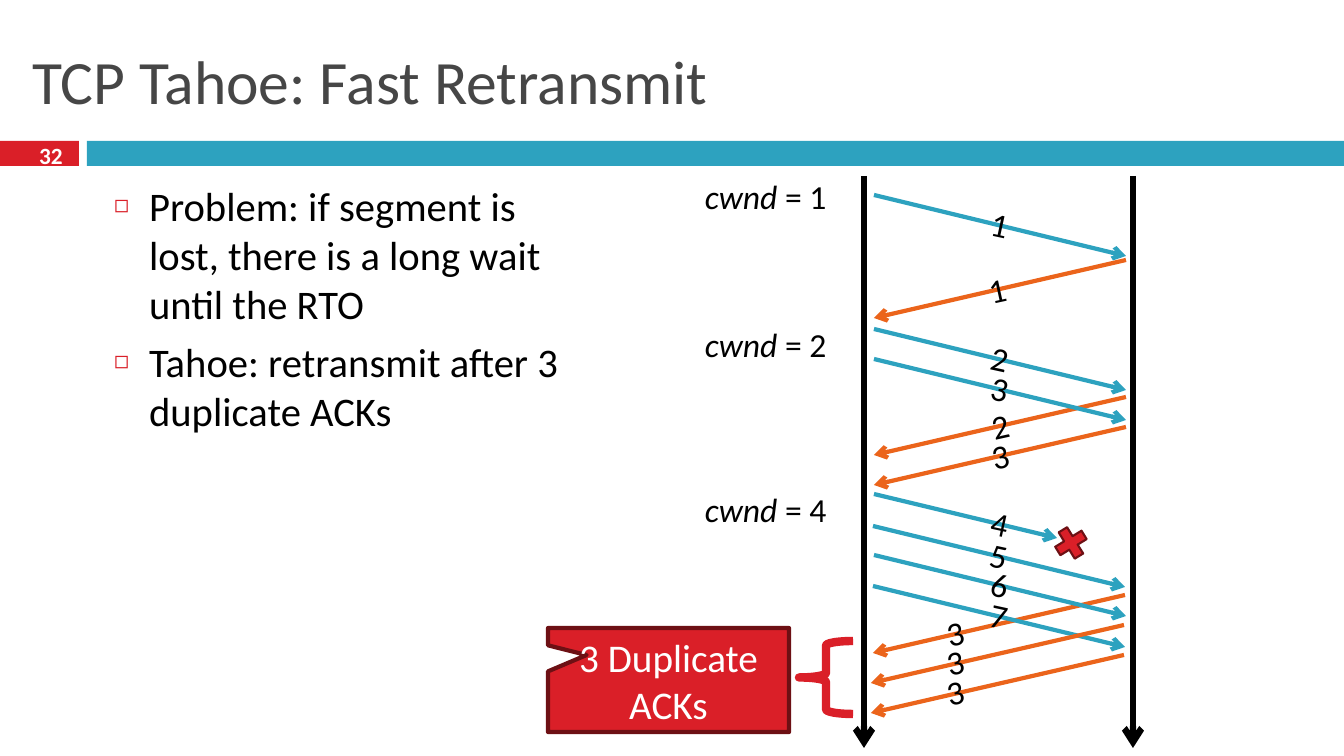
from dataclasses import dataclass

from lxml import etree
from pptx import Presentation, slide as sl, util as u
from pptx.dml import color as col
from pptx.enum import shapes as kinds, text as en
from pptx.oxml import ns
from pptx.shapes import autoshape as auto, base
from pptx.text import text as tx

SCALE = 914400 / 100.8
BLACK, WHITE, GREY = "000000", "FFFFFF", "464646"
RED, DARK, BLUE, ORANGE = "DA1F28", "6D1014", "2DA2BF", "EB641B"
SHAPE = kinds.MSO_SHAPE
LEFT, CENTER = en.PP_ALIGN.LEFT, en.PP_ALIGN.CENTER
TOP, MIDDLE = en.MSO_ANCHOR.TOP, en.MSO_ANCHOR.MIDDLE

Box = tuple[int, int, int, int]


@dataclass
class Data:
    x: int
    y: int
    label: str
    run: int = 252
    drop: int = 61


@dataclass
class Ack:
    x: int
    y: int
    end: int
    label: str
    left: int
    down: int


@dataclass
class Window:
    y: int
    size: int


SENDS = [
    Data(874, 195, "1"),
    Data(874, 329, "2"),
    Data(874, 359, "3"),
    Data(874, 494, "4", 183, 44),
    Data(873, 526, "5"),
    Data(874, 555, "6"),
    Data(873, 586, "7"),
]
ACKS = [
    Ack(1126, 260, 874, "1", 941, 4),
    Ack(1126, 397, 874, "2", 944, 3),
    Ack(1126, 427, 874, "3", 944, 3),
    Ack(1125, 595, 873, "3", 899, 12),
    Ack(1124, 625, 871, "3", 899, 11),
    Ack(1124, 655, 871, "3", 899, 11),
]
WINDOWS = [Window(171, 1), Window(319, 2), Window(484, 4)]
POINTS = [
    "Problem: if segment is lost, there is a long wait until the RTO",
    "Tahoe: retransmit after 3 duplicate ACKs",
]


def px(size: int) -> u.Emu:
    return u.Emu(round(size * SCALE))


def rgb(code: str) -> col.RGBColor:
    return col.RGBColor.from_string(code)


def place(item: base.BaseShape, box: Box) -> None:
    item.left, item.top, item.width, item.height = map(px, box)


def mark(para: tx._Paragraph) -> None:
    props = para._p.get_or_add_pPr()
    props.set("marL", str(px(35)))
    props.set("indent", str(-px(35)))
    tint = etree.SubElement(props, ns.qn("a:buClr"))
    etree.SubElement(tint, ns.qn("a:srgbClr"), val=RED)
    etree.SubElement(props, ns.qn("a:buSzPct"), val="60000")
    etree.SubElement(props, ns.qn("a:buChar"), char="◻")


def write(frame: tx.TextFrame, lines: list[str], size: float, color: str = BLACK,
          align: en.PP_ALIGN = LEFT, anchor: en.MSO_ANCHOR = TOP, lead: str = "",
          bold: bool = False, wrap: bool = True, bullet: bool = False,
          gap: int = 0) -> None:
    frame.auto_size = en.MSO_AUTO_SIZE.NONE
    frame.word_wrap = wrap
    frame.vertical_anchor = anchor
    for i, line in enumerate(lines):
        para = frame.add_paragraph() if i else frame.paragraphs[0]
        if bullet:
            mark(para)
        para.alignment = align
        para.space_before = u.Pt(gap if i else 0)
        for part, slant in ((lead, True), (line, False)):
            if part:
                run = para.add_run()
                run.text = part
                font = run.font
                font.name, font.size = "Calibri", u.Pt(size)
                font.bold, font.italic = bold, slant
                font.color.rgb = rgb(color)


def label(page: sl.Slide, box: Box, words: str, size: float = 24,
          turn: float = 0, **form) -> None:
    item = page.shapes.add_textbox(*map(px, box))
    item.rotation = turn
    write(item.text_frame, [words], size, **form)


def draw(page: sl.Slide, kind: kinds.MSO_SHAPE, box: Box, fill: str = "",
         line: str = "", width: float = 1) -> auto.Shape:
    item = page.shapes.add_shape(kind, *map(px, box))
    item.shadow.inherit = False
    if fill:
        item.fill.solid()
        item.fill.fore_color.rgb = rgb(fill)
    else:
        item.fill.background()
    if line:
        item.line.color.rgb = rgb(line)
        item.line.width = u.Pt(width)
    else:
        item.line.fill.background()
    return item


def arrow(page: sl.Slide, ends: Box, color: str, width: float = 3) -> None:
    item = page.shapes.add_connector(kinds.MSO_CONNECTOR.STRAIGHT, *map(px, ends))
    item.line.color.rgb = rgb(color)
    item.line.width = u.Pt(width)
    etree.SubElement(item.line._get_or_add_ln(), ns.qn("a:tailEnd"), type="arrow")
    etree.SubElement(item._element.spPr, ns.qn("a:effectLst"))


def reply(page: sl.Slide, ack: Ack) -> None:
    arrow(page, (ack.x, ack.y, ack.end, ack.y + 58), ORANGE)


def frame(page: sl.Slide) -> None:
    draw(page, SHAPE.RECTANGLE, (0, 141, 79, 25), RED)
    draw(page, SHAPE.RECTANGLE, (87, 141, 1257, 25), BLUE)
    title, body = page.shapes.title, page.placeholders[1]
    place(title, (22, 25, 1299, 109))
    write(title.text_frame, ["TCP Tahoe: Fast Retransmit"], 44, GREY, anchor=MIDDLE)
    label(page, (22, 139, 58, 33), "32", 16.6, color=WHITE, align=CENTER,
          anchor=MIDDLE, bold=True)
    place(body, (104, 176, 465, 562))
    write(body.text_frame, POINTS, 29, bullet=True, gap=7)


def chart(page: sl.Slide) -> None:
    for ack in ACKS[:4]:
        reply(page, ack)
    for x in (864, 1133):
        arrow(page, (x, 176, x, 748), BLACK, 4.5)
    for send in SENDS:
        arrow(page, (send.x, send.y, send.x + send.run, send.y + send.drop), BLUE)
        label(page, (send.x + 70, send.y + 4, 112, 50), send.label,
              turn=12.3, align=CENTER)
    for ack in ACKS[4:]:
        reply(page, ack)
    for win in WINDOWS:
        label(page, (695, win.y, 146, 50), f" = {win.size}", lead="cwnd", wrap=False)
    for ack in ACKS:
        label(page, (ack.left, ack.y + ack.down, 112, 50), ack.label,
              turn=347.5, align=CENTER)


def alert(page: sl.Slide) -> None:
    cross = draw(page, SHAPE.MATH_MULTIPLY, (1050, 522, 42, 42), RED, DARK, 1.5)
    cross.rotation = 13.5
    draw(page, SHAPE.LEFT_BRACE, (799, 641, 54, 73), line=RED, width=6)
    note = draw(page, SHAPE.RECTANGULAR_CALLOUT, (548, 628, 241, 104), RED, DARK, 3)
    note.adjustments[0], note.adjustments[1] = -0.34, -0.24
    write(note.text_frame, ["3 Duplicate ACKs"], 28, WHITE, CENTER, MIDDLE)


def main() -> None:
    deck = Presentation()
    deck.slide_width, deck.slide_height = px(1344), px(756)
    page = deck.slides.add_slide(deck.slide_layouts[1])
    frame(page)
    chart(page)
    alert(page)
    deck.save("out.pptx")


if __name__ == "__main__":
    main()
